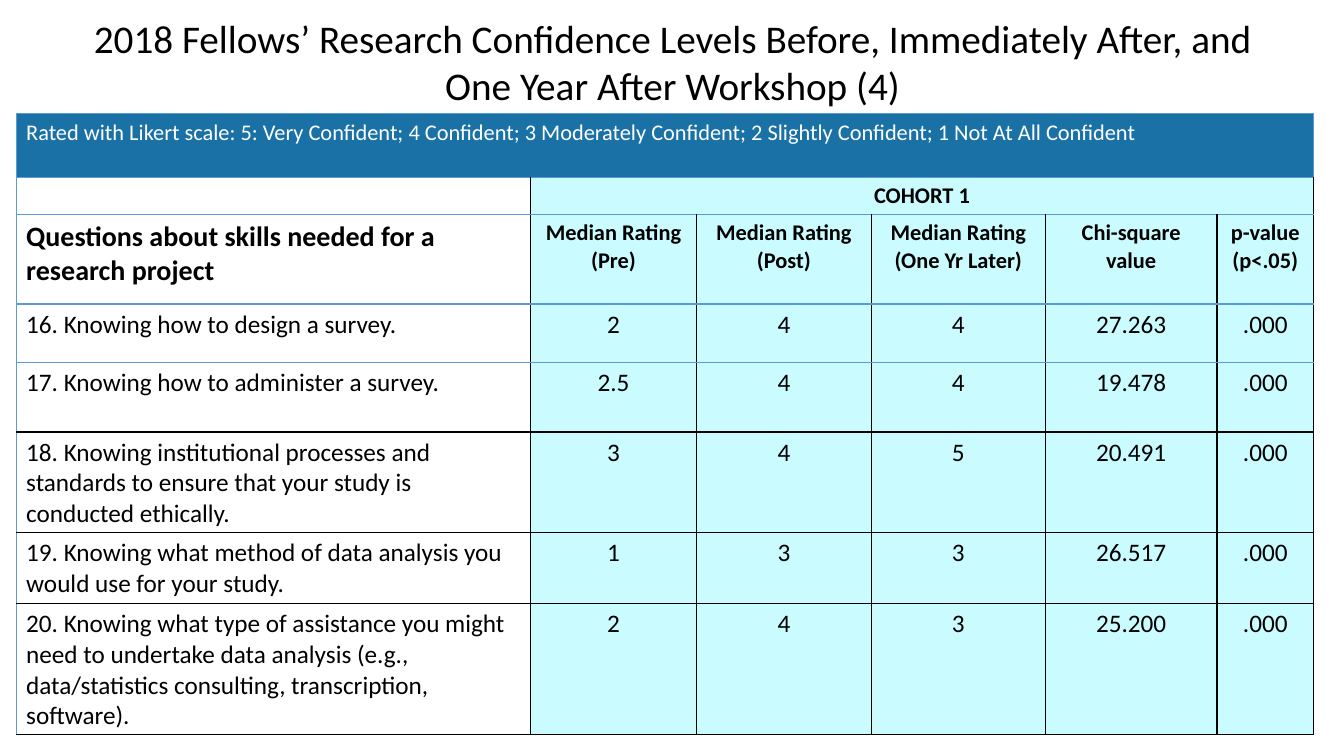
import dataclasses

import lxml.etree
import pptx
import pptx.dml.color
import pptx.enum.text
import pptx.oxml.ns
import pptx.util

Inches = pptx.util.Inches
ALIGN = pptx.enum.text.PP_ALIGN


@dataclasses.dataclass(frozen=True)
class Theme:
    font: str = "Calibri"
    black: str = "000000"
    white: str = "FFFFFF"
    banner: str = "1A71A6"
    cyan: str = "CAFCFF"
    blue: str = "5B9BD5"
    title: int = 28
    large: int = 20
    body: int = 18
    small: int = 16
    line: int = 1


WIDTHS = [5.1, 1.65, 1.73, 1.73, 1.7, 0.96]
HEIGHTS = [0.63, 0.36, 0.89, 0.58, 0.69, 0.69, 0.69, 0.99]
HEADS = [
    "Questions about skills needed for a research project",
    "Median Rating\n(Pre)",
    "Median Rating\n(Post)",
    "Median Rating\n(One Yr Later)",
    "Chi-square value",
    "p-value (p<.05)",
]
SKILLS = [
    ["16. Knowing how to design a survey.", "2", "4", "4", "27.263", ".000"],
    ["17. Knowing how to administer a survey.", "2.5", "4", "4", "19.478", ".000"],
    ["18. Knowing institutional processes and standards to ensure that "
     "your study is conducted ethically.", "3", "4", "5", "20.491", ".000"],
    ["19. Knowing what method of data analysis you would use for your study.",
     "1", "3", "3", "26.517", ".000"],
    ["20. Knowing what type of assistance you might need to undertake data "
     "analysis (e.g., data/statistics consulting, transcription, software).",
     "2", "4", "3", "25.200", ".000"],
]
SCALE = ("Rated with Likert scale: 5: Very Confident; 4 Confident; "
         "3 Moderately Confident; 2 Slightly Confident; 1 Not At All Confident")
ROWS = [[SCALE] + [""] * 5, ["", "COHORT 1"] + [""] * 4, HEADS] + SKILLS


def paint(fill, color):
    fill.solid()
    fill.fore_color.rgb = pptx.dml.color.RGBColor.from_string(color)


def write(frame, text, *, font, size, color, bold=False, align=ALIGN.LEFT):
    frame.word_wrap = True
    frame.text = text
    for para in frame.paragraphs:
        para.alignment = align
        for run in para.runs:
            run.font.name = font
            run.font.size = pptx.util.Pt(size)
            run.font.bold = bold
            paint(run.font.fill, color)
        if not para.runs:
            para._p.get_or_add_endParaRPr().set("sz", str(size * 100))


class Deck:
    def __init__(self, theme):
        self.theme = theme
        self.file = pptx.Presentation()
        self.file.slide_width = Inches(13.33)
        self.file.slide_height = Inches(7.5)
        self.slide = self.file.slides.add_slide(self.file.slide_layouts[5])

    def title(self, text, left, top, width, height):
        box = self.slide.shapes.title
        box.left, box.top = Inches(left), Inches(top)
        box.width, box.height = Inches(width), Inches(height)
        frame = box.text_frame
        write(frame, text, font=self.theme.font, size=self.theme.title,
              color=self.theme.black, align=ALIGN.CENTER)
        frame.vertical_anchor = pptx.enum.text.MSO_ANCHOR.TOP
        frame.auto_size = pptx.enum.text.MSO_AUTO_SIZE.SHAPE_TO_FIT_TEXT

    def edge(self, cell, side, color):
        name = pptx.oxml.ns.qn
        line = lxml.etree.SubElement(
            cell._tc.get_or_add_tcPr(), name("a:ln" + side),
            w=str(pptx.util.Pt(self.theme.line)))
        fill = lxml.etree.SubElement(line, name("a:solidFill"))
        lxml.etree.SubElement(fill, name("a:srgbClr"), val=color)

    def cell(self, cell, text, row, col):
        look = self.theme
        top = look.blue if row <= 4 else look.black
        base = look.blue if row <= 3 else look.black
        left = look.blue if row == 0 or col == 0 else look.black
        right = look.blue if row == 0 else look.black
        for side, color in zip("LRTB", (left, right, top, base)):
            self.edge(cell, side, color)
        back = look.cyan if col else look.white
        paint(cell.fill, look.banner if row == 0 else back)
        size = look.body if row > 2 else look.small
        if row == 2 and col == 0:
            size = look.large
        write(cell.text_frame, text, font=look.font, size=size,
              color=look.white if row == 0 else look.black,
              bold=row in (1, 2), align=ALIGN.CENTER if col else ALIGN.LEFT)

    def table(self, rows, left, top, widths, heights):
        grid = self.slide.shapes.add_table(
            len(rows), len(widths), Inches(left), Inches(top),
            Inches(sum(widths)), Inches(sum(heights))).table
        grid.first_row = grid.horz_banding = False
        for col, width in zip(grid.columns, widths):
            col.width = Inches(width)
        for row, height in zip(grid.rows, heights):
            row.height = Inches(height)
        for row, texts in enumerate(rows):
            for col, text in enumerate(texts):
                self.cell(grid.cell(row, col), text, row, col)
        for row, start in enumerate((0, 1)):
            grid.cell(row, start).merge(grid.cell(row, len(widths) - 1))


def main():
    deck = Deck(Theme())
    deck.table(ROWS, 0.16, 1.13, WIDTHS, HEIGHTS)
    deck.title("2018 Fellows’ Research Confidence Levels Before, Immediately "
               "After, and\vOne Year After Workshop (4)", 0.32, 0.09, 12.7, 1.04)
    deck.file.save("out.pptx")


if __name__ == "__main__":
    main()
